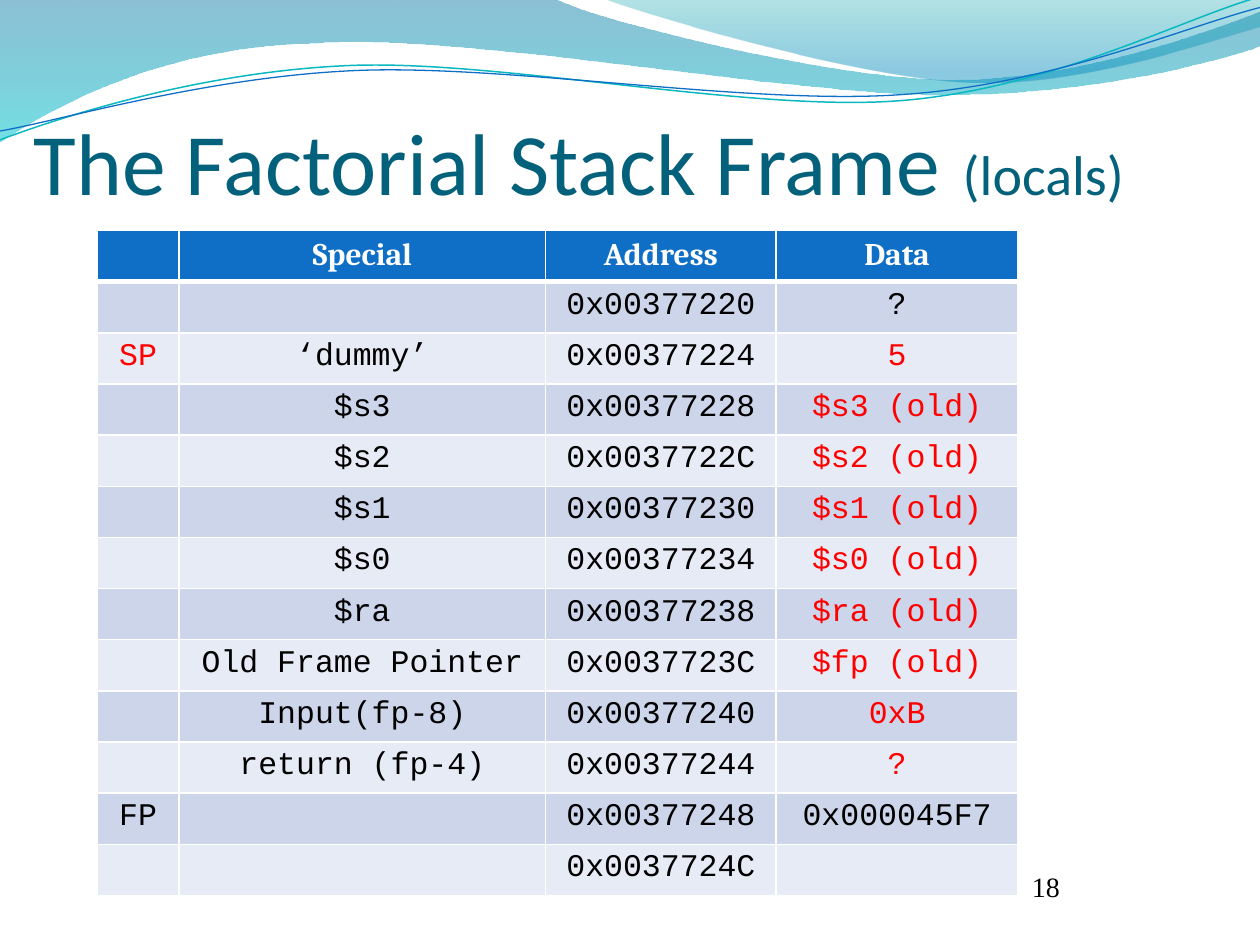
from dataclasses import dataclass
from math import cos, radians, sin

from lxml.etree import Element, SubElement
from pptx import Presentation
from pptx.dml.color import RGBColor as Rgb
from pptx.enum.text import MSO_ANCHOR as Anchor, PP_ALIGN as Align
from pptx.oxml.ns import qn
from pptx.util import Inches, Pt


@dataclass(frozen=True)
class Theme:
    """Colours, fonts and type sizes of the slide."""
    title: str = "04617B"
    accent: str = "0F6FC6"
    teal: str = "0AB8BF"
    black: str = "000000"
    white: str = "FFFFFF"
    red: str = "FF0000"
    bands: tuple = ("CCD5EA", "E7EBF5")
    wave: tuple = ((0, "0074A1", 45), (1, "00C6CF", 55))
    crest: tuple = ((0, "00A1A9", 30), (0.8, "008BBF", 45))
    title_font: str = "Calibri"
    header_font: str = "Cambria"
    code_font: str = "Courier New"
    number_font: str = "Times New Roman"
    title_size: int = 50
    gap_size: int = 54
    note_size: int = 32
    table_size: int = 18
    number_size: int = 16


THEME = Theme()
WAVE = [(0, 0), (4.4, -0.01), (4.76, 0.17, 6.64, 0.63, 7.58, 0.63),
        (8.53, 0.63, 9.58, 0.26, 10, 0.09), (10.01, 0.36),
        (9.83, 0.44, 8.7, 0.76, 7.46, 0.75), (6.22, 0.75, 3.82, 0.28, 2.57, 0.34),
        (1.29, 0.36, 0.46, 0.83, -0.01, 1.13)]
CREST = [(4.79, -0.01), (5.09, 0.11, 6.82, 0.62, 7.69, 0.65),
         (8.56, 0.69, 9.61, 0.32, 10, 0.21), (10, 0)]
TEAL_LINE = [(0, 1.11), (0.48, 0.93, 1.58, 0.57, 2.77, 0.52),
             (3.95, 0.47, 5.93, 0.89, 7.13, 0.8), (8.33, 0.71, 9.38, 0.15, 9.98, -0.02)]
BLUE_LINE = [(0, 1.04), (0.47, 0.96, 1.64, 0.61, 2.83, 0.56),
             (4.03, 0.51, 5.97, 0.84, 7.17, 0.75), (8.36, 0.67, 9.41, 0.21, 10, 0.06)]
TILT = -2.7
HEADERS = ("", "Special", "Address", "Data")
FRAME = [("", "", "?"), ("SP", "‘dummy’", "5"),
         *[("", f"${name}", f"${name} (old)") for name in ("s3", "s2", "s1", "s0", "ra")],
         ("", "Old Frame Pointer", "$fp (old)"), ("", "Input(fp-8)", "0xB"),
         ("", "return (fp-4)", "?"), ("FP", "", "0x000045F7"), ("", "", "")]
FIRST_ADDRESS = 0x00377220
CURRENT_ROWS = range(2, 11)
COLUMN_WIDTHS = (0.65, 2.91, 1.83, 1.92)
TABLE_HEIGHT = 5.28


def apply_format(target, values):
    """Set each named attribute on the target."""
    for name, value in values.items():
        setattr(target, name, value)


def add_run(paragraph, text, size, font, color, bold=False):
    """Add one formatted run of text."""
    run = paragraph.add_run()
    run.text = text
    apply_format(run.font, {"size": Pt(size), "name": font, "bold": bold})
    run.font.color.rgb = Rgb.from_string(color)


def turn(point, center, degrees):
    """Turn a point about a center, clockwise on the slide."""
    angle = radians(degrees)
    dx, dy = point[0] - center[0], point[1] - center[1]
    return (center[0] + dx * cos(angle) - dy * sin(angle),
            center[1] + dx * sin(angle) + dy * cos(angle))


def bend(shape, segments):
    """Join the points of each six-value segment into a cubic curve."""
    outline = next(shape.element.iter(qn("a:path")))
    nodes = iter(outline.findall(qn("a:lnTo")))
    for segment in segments[1:]:
        group = [next(nodes) for _ in range(len(segment) // 2)]
        if len(group) == 1:
            continue
        curve = Element(qn("a:cubicBezTo"))
        group[0].addprevious(curve)
        for node in group:
            curve.append(node[0])
            outline.remove(node)


def add_outline(slide, segments, close, center=(0, 0), tilt=0):
    """Add a freeform of lines and curves, tilted about its center."""
    pairs = [segment[i:i + 2] for segment in segments for i in range(0, len(segment), 2)]
    points = [tuple(map(Inches, turn(pair, center, -tilt))) for pair in pairs]
    builder = slide.shapes.build_freeform(*points[0])
    builder.add_line_segments(points[1:], close=close)
    shape = builder.convert_to_shape()
    bend(shape, segments)
    shape.rotation = tilt
    shape.shadow.inherit = False
    return shape


def add_wave(slide, segments, stops):
    """Add a closed wave with a translucent downward gradient."""
    shape = add_outline(slide, segments, True)
    shape.line.fill.background()
    shape.fill.gradient()
    shape.fill.gradient_angle = 270
    for stop, (position, color, _) in zip(shape.fill.gradient_stops, stops):
        stop.position = position
        stop.color.rgb = Rgb.from_string(color)
    colors = shape.element.spPr.iter(qn("a:srgbClr"))
    for color, (_, _, opacity) in zip(list(colors), stops):
        SubElement(color, qn("a:alpha"), val=str(opacity * 1000))


def add_curve(slide, segments, center, color, width):
    """Add an open curved line."""
    shape = add_outline(slide, segments, False, center, TILT)
    shape.fill.background()
    shape.line.color.rgb = Rgb.from_string(color)
    shape.line.width = Pt(width)


def add_text(slide, box, runs, frame_format):
    """Add a text box with a single paragraph of runs."""
    frame = slide.shapes.add_textbox(*map(Inches, box)).text_frame
    apply_format(frame, {"word_wrap": True, **frame_format})
    for run in runs:
        add_run(frame.paragraphs[0], *run)


def add_border(cell, side, width):
    """Draw a white border on one side of a cell."""
    properties = cell._tc.get_or_add_tcPr()
    line = SubElement(properties, qn(f"a:ln{side}"), w=str(Pt(width)))
    fill = SubElement(line, qn("a:solidFill"))
    SubElement(fill, qn("a:srgbClr"), val=THEME.white)


def fill_cell(cell, row, column, text):
    """Style a table cell by its place and write its text."""
    for side in "LRTB":
        add_border(cell, side, 3 if row == 0 and side == "B" else 1)
    cell.fill.solid()
    band = THEME.bands[(row - 1) % 2] if row else THEME.accent
    cell.fill.fore_color.rgb = Rgb.from_string(band)
    paragraph = cell.text_frame.paragraphs[0]
    paragraph.alignment = Align.CENTER
    if not text:
        return
    if row == 0:
        add_run(paragraph, text, THEME.table_size, THEME.header_font, THEME.white, True)
    else:
        current = row in CURRENT_ROWS and column in (0, 3)
        color = THEME.red if current else THEME.black
        add_run(paragraph, text, THEME.table_size, THEME.code_font, color)


def add_stack_table(slide):
    """Add the table of stack addresses and their contents."""
    rows = [HEADERS] + [(pointer, special, f"0x{FIRST_ADDRESS + 4 * index:08X}", data)
                        for index, (pointer, special, data) in enumerate(FRAME)]
    box = (0.77, 1.83, sum(COLUMN_WIDTHS), TABLE_HEIGHT)
    table = slide.shapes.add_table(len(rows), len(HEADERS), *map(Inches, box)).table
    for column, width in zip(table.columns, COLUMN_WIDTHS):
        column.width = Inches(width)
    for row, texts in enumerate(rows):
        for column, text in enumerate(texts):
            fill_cell(table.cell(row, column), row, column, text)


def main():
    """Build and save the slide."""
    presentation = Presentation()
    apply_format(presentation, {"slide_width": Inches(10), "slide_height": Inches(7.5)})
    slide = presentation.slides.add_slide(presentation.slide_layouts[6])
    add_wave(slide, WAVE, THEME.wave)
    add_wave(slide, CREST, THEME.crest)
    add_curve(slide, TEAL_LINE, (4.99, 0.58), THEME.teal, 0.85)
    add_curve(slide, BLUE_LINE, (5, 0.59), THEME.accent, 0.75)
    margins = dict.fromkeys(("margin_left", "margin_top", "margin_right", "margin_bottom"), 0)
    add_text(slide, (8.19, 6.75, 1.08, 0.42),
             [("18", THEME.number_size, THEME.number_font, THEME.black)],
             {"vertical_anchor": Anchor.BOTTOM, **margins})
    title_parts = (("The Factorial Stack Frame", THEME.title_size),
                   (" ", THEME.gap_size), ("(locals)", THEME.note_size))
    add_text(slide, (0.17, 0.75, 9.5, 0.67),
             [(text, size, THEME.title_font, THEME.title) for text, size in title_parts],
             {"vertical_anchor": Anchor.TOP})
    add_stack_table(slide)
    presentation.save("out.pptx")


if __name__ == "__main__":
    main()
